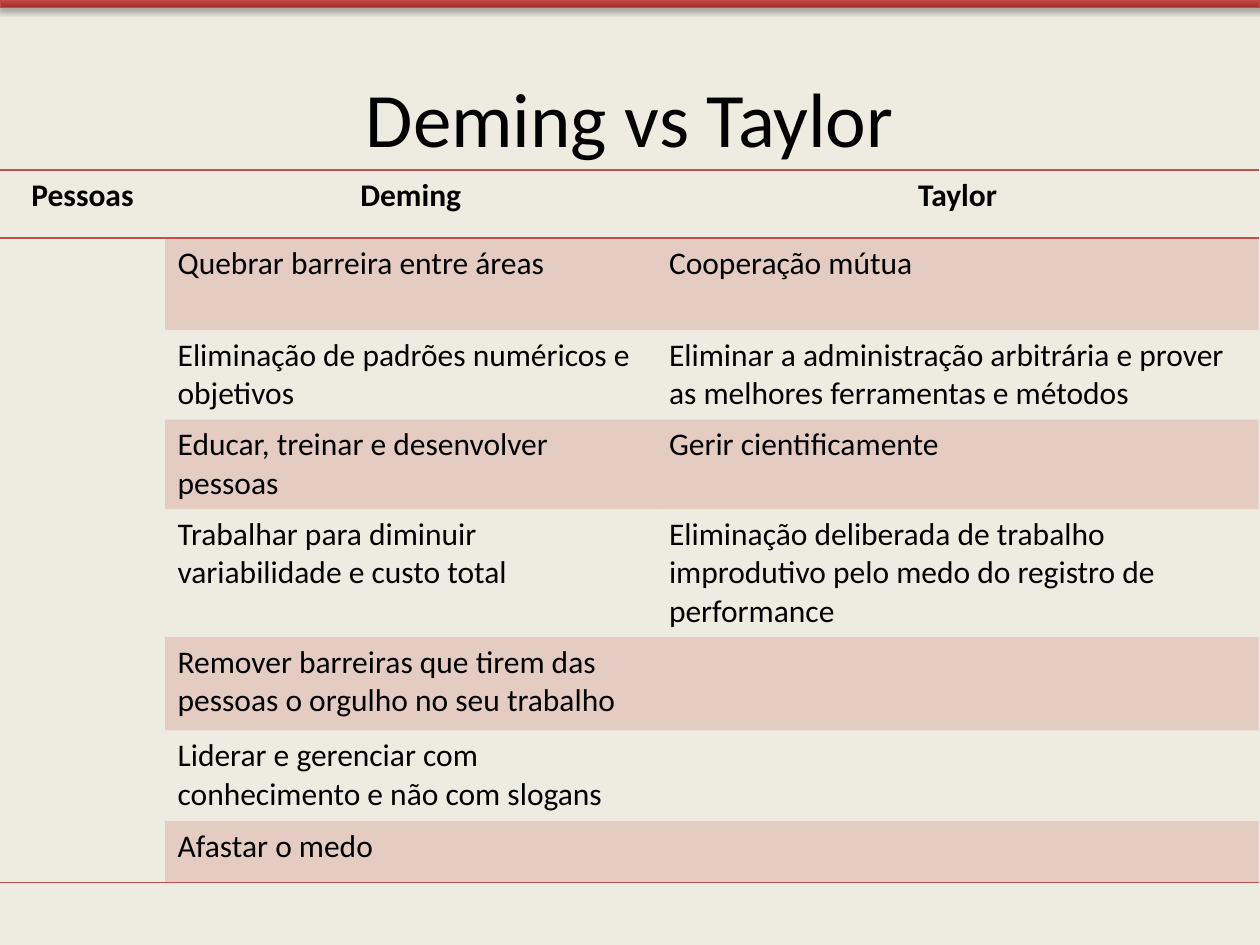
"""Build the slide that compares Deming and Taylor on people."""
from copy import deepcopy
from lxml import etree
from pptx import Presentation
from pptx.dml.color import RGBColor
from pptx.enum.shapes import MSO_SHAPE
from pptx.enum.text import MSO_ANCHOR, PP_ALIGN
from pptx.oxml.ns import qn
from pptx.util import Inches, Pt

RECT = MSO_SHAPE.RECTANGLE
MIDDLE = MSO_ANCHOR.MIDDLE
CENTER = PP_ALIGN.CENTER
LEFT = PP_ALIGN.LEFT
BLACK = RGBColor(0x00, 0x00, 0x00)
CREAM = RGBColor(0xEE, 0xEC, 0xE1)
RED = RGBColor(0xC0, 0x50, 0x4D)
EDGE = RGBColor(0xBF, 0x4C, 0x48)
SHADES = [
    (0, RGBColor(0x9C, 0x2F, 0x2D)),
    (0.8, RGBColor(0xCB, 0x3E, 0x3A)),
    (1, RGBColor(0xCE, 0x3B, 0x37)),
]
FONT = "Calibri"
NO_STYLE = "{2D5ABB26-0587-4C30-8999-92F81FD0307C}"
COLS = [1.31, 3.9, 4.78]
ROWS = [0.54, 0.73, 0.71, 0.59, 0.75, 0.74, 0.72, 0.49]
TEXTS = [
    ("Pessoas", "Deming", "Taylor"),
    ("", "Quebrar barreira entre áreas", "Cooperação mútua"),
    ("", "Eliminação de padrões numéricos e objetivos",
     "Eliminar a administração arbitrária e prover as melhores ferramentas e métodos"),
    ("", "Educar, treinar e desenvolver pessoas", "Gerir cientificamente"),
    ("", "Trabalhar para diminuir variabilidade e custo total",
     "Eliminação deliberada de trabalho improdutivo pelo medo do registro de performance"),
    ("", "Remover barreiras que tirem das pessoas o orgulho no seu trabalho", ""),
    ("", "Liderar e gerenciar com conhecimento e não com slogans", ""),
    ("", "Afastar o medo", ""),
]


def write(para, text, size, align, bold=False):
    para.alignment = align
    run = para.add_run()
    run.text = text
    font = run.font
    font.name, font.size, font.bold = FONT, Pt(size), bold
    font.color.rgb = BLACK


def tint(parent, color, share):
    node = etree.SubElement(parent, qn("a:srgbClr"), val=str(color))
    etree.SubElement(node, qn("a:alpha"), val=str(share * 1000))


prs = Presentation()
prs.slide_width, prs.slide_height = Inches(10), Inches(7.5)
wide, high = prs.slide_width, prs.slide_height
slide = prs.slides.add_slide(prs.slide_layouts[5])
back = slide.background.fill
back.solid()
back.fore_color.rgb = CREAM

bar = slide.shapes.add_shape(RECT, 0, 0, wide, int(high * 0.008))
slide.shapes.element.insert(2, bar.element)
bar.fill.gradient()
bar.fill.gradient_angle = 90
stops = next(bar.element.iter(qn("a:gsLst")))
stops.append(deepcopy(stops[-1]))
for stop, (place, color) in zip(bar.fill.gradient_stops, SHADES):
    stop.position = place
    stop.color.rgb = color
bar.line.color.rgb = EDGE
bar.line.width = Pt(0.75)
bar.shadow.inherit = False
glow = etree.SubElement(
    next(bar.element.iter(qn("a:effectLst"))), qn("a:outerShdw"),
    blurRad=str(Pt(3.1)), dist=str(Pt(1.8)), dir="5400000", rotWithShape="0")
tint(glow, BLACK, 35)

title = slide.shapes.title
title.left, title.top = int(wide * 0.05), int(high * 0.04)
title.width, title.height = int(wide * 0.9), int(high / 6)
title.text_frame.vertical_anchor = MIDDLE
write(title.text_frame.paragraphs[0], "Deming vs Taylor", 44, CENTER)

frame = slide.shapes.add_table(
    len(ROWS), len(COLS), 0, int(high * 0.18), wide, int(high * 0.75))
next(frame.element.iter(qn("a:tableStyleId"))).text = NO_STYLE
table = frame.table
table.horz_banding = False
for col, size in zip(table.columns, COLS):
    col.width = Inches(size)
for row, size in zip(table.rows, ROWS):
    row.height = Inches(size)
table.cell(1, 0).merge(table.cell(4, 0))

for r, texts in enumerate(TEXTS):
    head, last = r == 0, r == len(TEXTS) - 1
    sides = ["a:lnT", "a:lnB"] if head else ["a:lnB"] if last else []
    for c, text in enumerate(texts):
        cell = table.cell(r, c)
        if text:
            write(cell.text_frame.paragraphs[0], text, 18, CENTER if head else LEFT, head)
        props = cell._tc.get_or_add_tcPr()
        for side in sides:
            line = etree.SubElement(props, qn(side), w=str(Pt(1)))
            tint(etree.SubElement(line, qn("a:solidFill")), RED, 100)
        if r % 2 and c:
            tint(etree.SubElement(props, qn("a:solidFill")), RED, 20)
        else:
            cell.fill.background()

prs.save("out.pptx")
